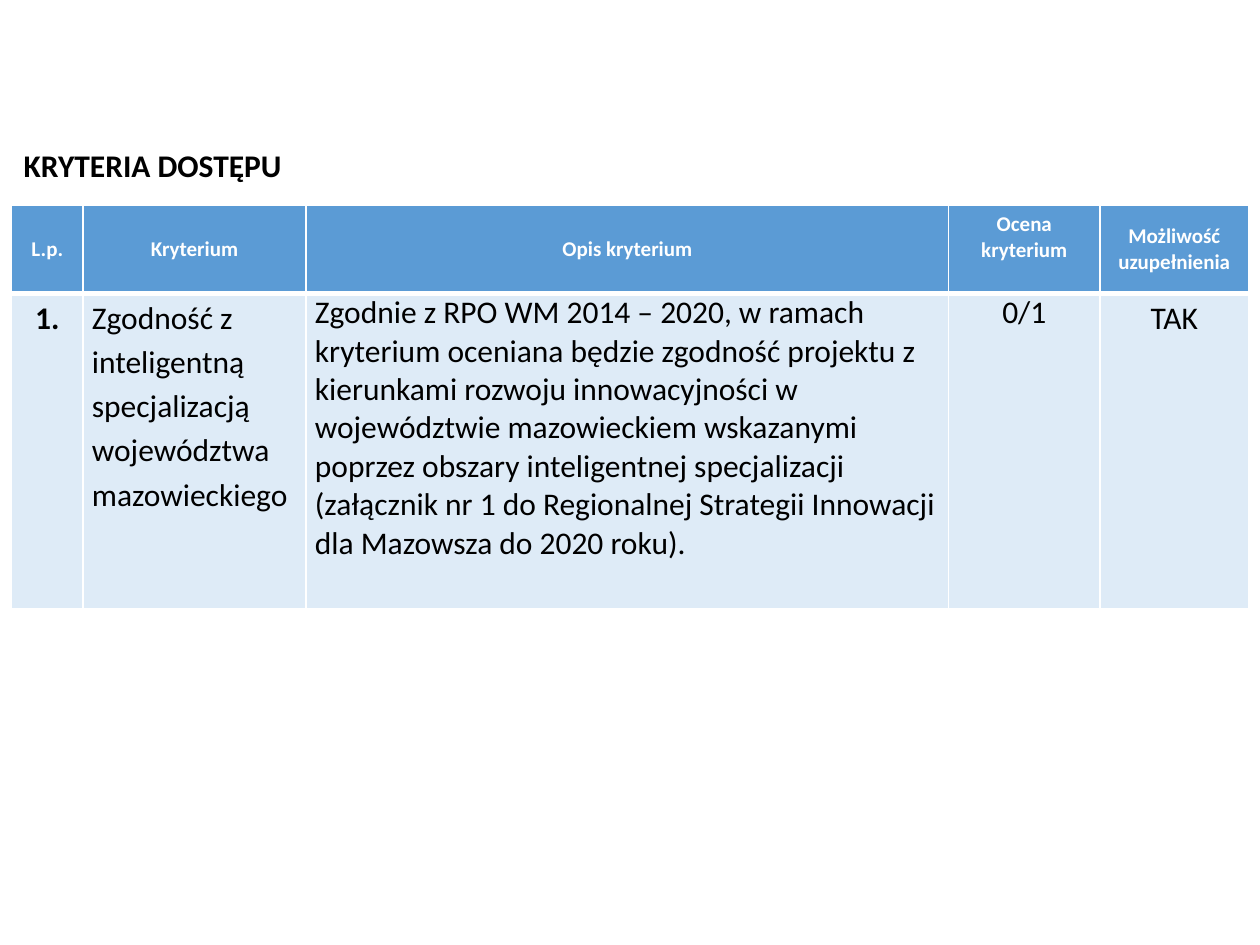
"""Build the slide with the table of access criteria."""
from lxml import etree
from pptx import Presentation
from pptx.dml.color import RGBColor
from pptx.enum.text import MSO_ANCHOR, PP_ALIGN
from pptx.oxml.ns import qn
from pptx.util import Inches, Pt

LEFT, MID = PP_ALIGN.LEFT, PP_ALIGN.CENTER
TOP, CENTRE = MSO_ANCHOR.TOP, MSO_ANCHOR.MIDDLE
HEX = {"head": "5B9BD5", "body": "DEEBF7", "white": "FFFFFF", "black": "000000"}
WIDTHS = [0.57, 1.77, 5.1, 1.2, 1.18]
HEIGHTS = [0.7, 2.5]
HEADS = [
    ("L.p.", CENTRE),
    ("Kryterium", CENTRE),
    ("Opis kryterium", CENTRE),
    ("Ocena kryterium", TOP),
    ("Możliwość uzupełnienia", CENTRE),
]
BODY = [
    ("1.", MID, 1.15, True),
    ("Zgodność z inteligentną specjalizacją województwa mazowieckiego", LEFT, 1.15, False),
    ("Zgodnie z RPO WM 2014 – 2020, w ramach kryterium oceniana będzie zgodność "
     "projektu z kierunkami rozwoju innowacyjności w województwie mazowieckiem "
     "wskazanymi poprzez obszary inteligentnej specjalizacji (załącznik nr 1 do "
     "Regionalnej Strategii Innowacji dla Mazowsza do 2020 roku).", LEFT, 1.0, False),
    ("0/1", MID, 1.0, False),
    ("TAK", MID, 1.15, False),
]


def write(frame, text, size, color, bold, align=LEFT, space=1.0):
    para = frame.paragraphs[0]
    para.alignment, para.line_spacing = align, space
    run = para.add_run()
    run.text = text
    for key, val in {"name": "Calibri", "size": Pt(size), "bold": bold}.items():
        setattr(run.font, key, val)
    run.font.color.rgb = RGBColor.from_string(HEX[color])


def paint(cell, color, base):
    props = cell._tc.get_or_add_tcPr()
    for side, width in {"L": 1, "R": 1, "T": 4 - base, "B": base}.items():
        line = etree.SubElement(props, qn(f"a:ln{side}"), w=str(Pt(width)))
        fill = etree.SubElement(line, qn("a:solidFill"))
        etree.SubElement(fill, qn("a:srgbClr"), val=HEX["white"])
    cell.fill.solid()
    cell.fill.fore_color.rgb = RGBColor.from_string(HEX[color])


prs = Presentation()
prs.slide_width, prs.slide_height = Inches(10), Inches(7.5)
slide = prs.slides.add_slide(prs.slide_layouts[6])

frame = slide.shapes.add_table(
    2, 5, Inches(0.09), Inches(1.63), Inches(sum(WIDTHS)), Inches(sum(HEIGHTS)))
table = frame.table
for col, width in zip(table.columns, WIDTHS):
    col.width = Inches(width)
for row, height in zip(table.rows, HEIGHTS):
    row.height = Inches(height)

for i, (text, anchor) in enumerate(HEADS):
    cell = table.cell(0, i)
    cell.vertical_anchor = anchor
    write(cell.text_frame, text, 12, "white", True, MID)
    paint(cell, "head", 3)

for i, (text, align, space, bold) in enumerate(BODY):
    cell = table.cell(1, i)
    cell.margin_left = cell.margin_right = Inches(0.07)
    cell.margin_top = cell.margin_bottom = 0
    write(cell.text_frame, text, 18, "black", bold, align, space)
    paint(cell, "body", 1)

title = slide.shapes.add_textbox(Inches(0.09), Inches(1.11), Inches(2.27), Inches(0.4))
title.text_frame.vertical_anchor = CENTRE
write(title.text_frame, "KRYTERIA DOSTĘPU", 18, "black", True)

prs.save("out.pptx")
